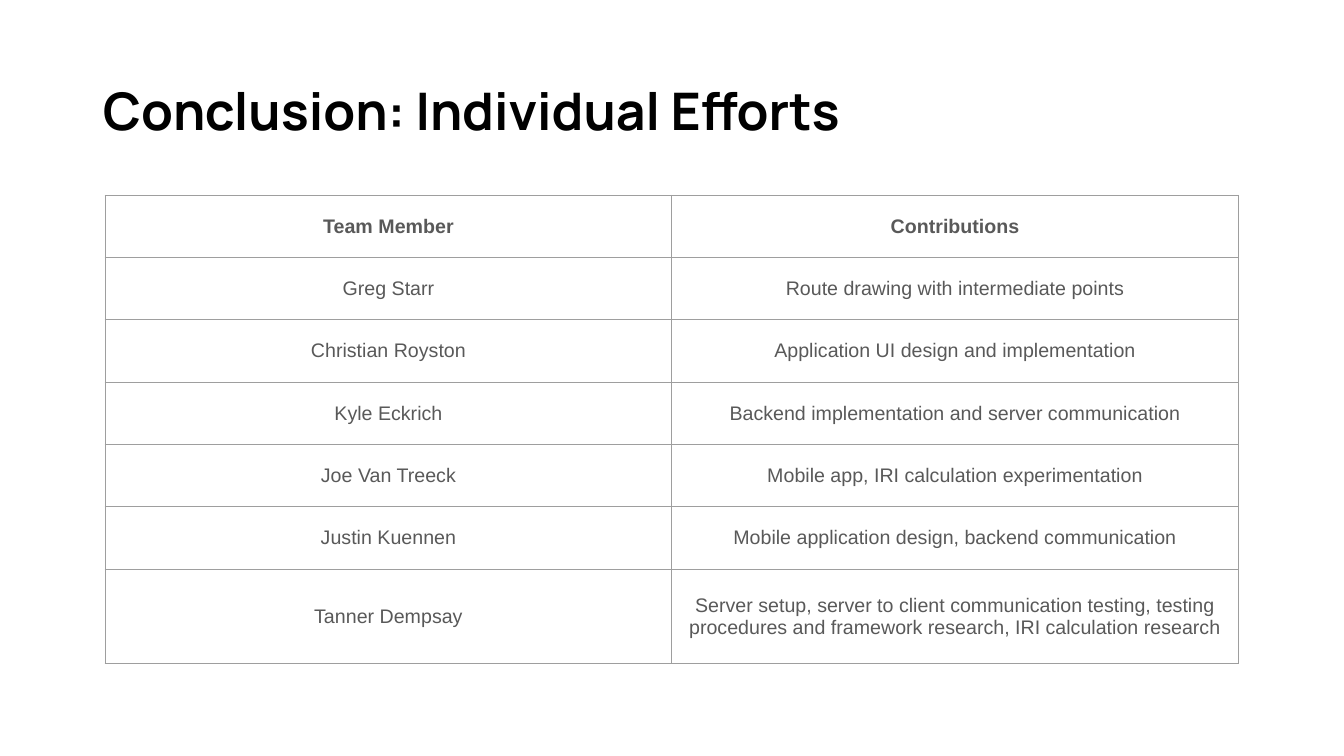
import pptx
import pptx.dml.color
import pptx.enum.text
import pptx.oxml
import pptx.oxml.ns
import pptx.util

Cm = pptx.util.Cm
Pt = pptx.util.Pt
RGB = pptx.dml.color.RGBColor
ALIGN = pptx.enum.text.PP_ALIGN
ANCHOR = pptx.enum.text.MSO_ANCHOR

BLACK = RGB(0x00, 0x00, 0x00)
GRAY = RGB(0x59, 0x59, 0x59)
RULE = RGB(0x9E, 0x9E, 0x9E)

HEAD = {"name": "Manrope", "size": Pt(37), "bold": True}
BODY = {"name": "Arial", "size": Pt(14)}
PAD = {"margin_left": Cm(0.25), "margin_right": Cm(0.25),
       "margin_top": Cm(0.25), "margin_bottom": Cm(0.25),
       "vertical_anchor": ANCHOR.MIDDLE}

ROWS = [
    ("Team Member", "Contributions"),
    ("Greg Starr", "Route drawing with intermediate points"),
    ("Christian Royston", "Application UI design and implementation"),
    ("Kyle Eckrich", "Backend implementation and server communication"),
    ("Joe Van Treeck", "Mobile app, IRI calculation experimentation"),
    ("Justin Kuennen", "Mobile application design, backend communication"),
    ("Tanner Dempsay", "Server setup, server to client communication testing, "
     "testing procedures and framework research, IRI calculation research"),
]


def apply(item, form):
    """Set each attribute named in form on item."""
    for name, value in form.items():
        setattr(item, name, value)


def write(frame, text, form, color, align):
    """Put one formatted paragraph in a text frame."""
    para = frame.paragraphs[0]
    para.alignment = align
    run = para.add_run()
    run.text = text
    apply(run.font, form)
    run.font.color.rgb = color
    return para


def add_title(slide, text):
    title = slide.shapes.title
    apply(title, {"left": Cm(2.34), "top": Cm(1.02),
                  "width": Cm(29.21), "height": Cm(3.68)})
    frame = title.text_frame
    apply(frame, {"vertical_anchor": ANCHOR.MIDDLE, "word_wrap": True})
    para = write(frame, text, HEAD, BLACK, ALIGN.LEFT)
    para.line_spacing = 0.9


def add_rules(cell):
    """Draw a thin line on all four sides of a cell."""
    props = cell._tc.get_or_add_tcPr()
    for side in "LRTB":
        props.append(pptx.oxml.parse_xml(
            f'<a:ln{side} {pptx.oxml.ns.nsdecls("a")} w="{Pt(0.75)}">'
            f'<a:solidFill><a:srgbClr val="{RULE}"/></a:solidFill>'
            f'</a:ln{side}>'))


def add_grid(slide, rows):
    high = [Cm(1.57)] * (len(rows) - 1) + [Cm(2.38)]
    wide = Cm(14.28)
    grid = slide.shapes.add_table(len(rows), 2, Cm(2.65), Cm(4.92),
                                  2 * wide, sum(high)).table
    apply(grid, {"first_row": False, "horz_banding": False})
    for col in grid.columns:
        col.width = wide
    for r, texts in enumerate(rows):
        grid.rows[r].height = high[r]
        for c, text in enumerate(texts):
            cell = grid.cell(r, c)
            apply(cell, PAD)
            add_rules(cell)
            cell.fill.background()
            write(cell.text_frame, text, {**BODY, "bold": r == 0},
                  GRAY, ALIGN.CENTER)


def main():
    deck = pptx.Presentation()
    apply(deck, {"slide_width": Cm(33.87), "slide_height": Cm(19.05)})
    slide = deck.slides.add_slide(deck.slide_layouts[5])
    add_title(slide, "Conclusion: Individual Efforts")
    add_grid(slide, ROWS)
    deck.save("out.pptx")


if __name__ == "__main__":
    main()
